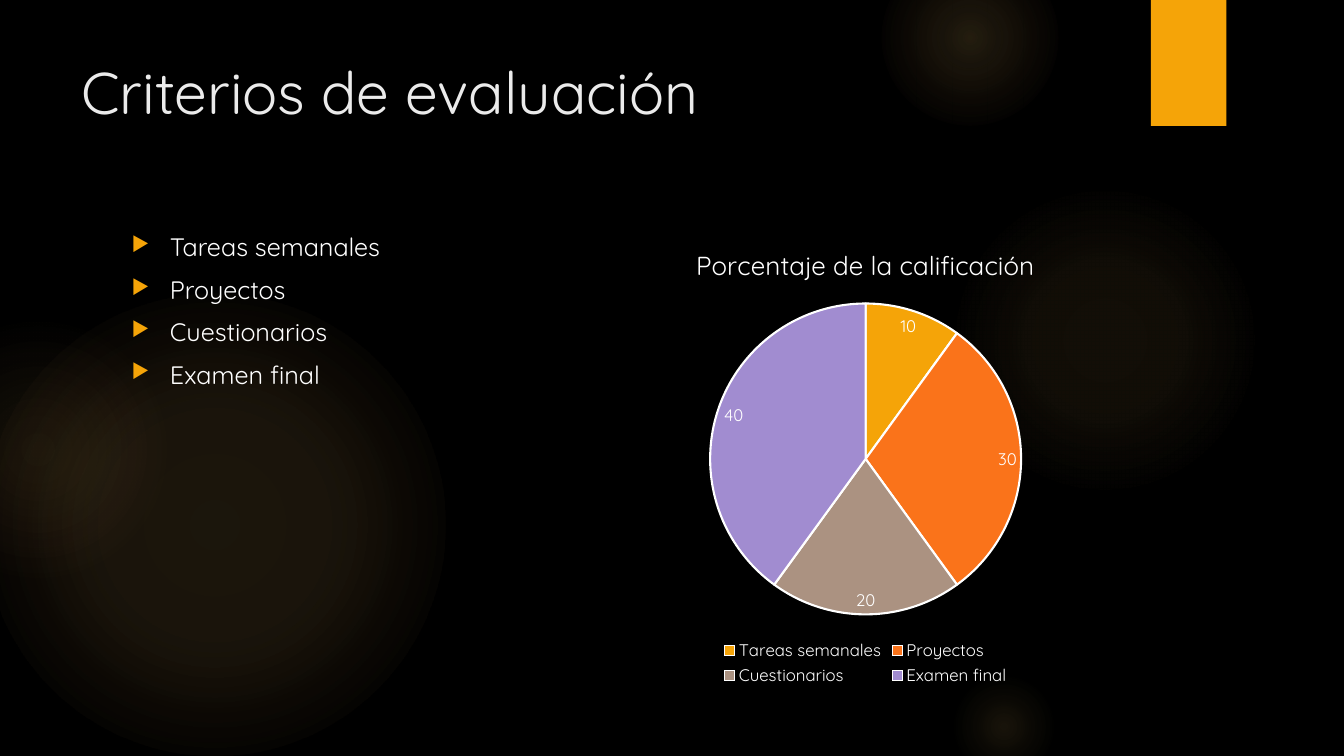
from dataclasses import dataclass

from lxml.etree import SubElement
from pptx import Presentation
from pptx.chart.data import CategoryChartData
from pptx.dml.color import RGBColor
from pptx.enum.chart import XL_CHART_TYPE as ChartType
from pptx.enum.chart import XL_LABEL_POSITION as LabelPosition
from pptx.enum.chart import XL_LEGEND_POSITION as LegendPosition
from pptx.enum.shapes import MSO_SHAPE as Preset
from pptx.enum.text import MSO_ANCHOR as Anchor
from pptx.enum.text import MSO_AUTO_SIZE as AutoSize
from pptx.enum.text import PP_ALIGN as Align
from pptx.oxml.ns import qn
from pptx.slide import Slide
from pptx.util import Emu, Inches, Pt

COLUMNS, ROWS = 160, 90
WIDTH, HEIGHT = Inches(13.33), Inches(7.5)
FONT = "Quicksand"
WHITE, AMBER, GLOW = "FFFFFF", "F5A408", "FAC96A"
TITLE = "Criterios de evaluación"
CHART_TITLE = "Porcentaje de la calificación"


@dataclass(frozen=True)
class Area:
    """A rectangle in grid columns and rows."""
    column: float
    row: float
    columns: float
    rows: float

    def box(self) -> tuple[Emu, Emu, Emu, Emu]:
        """Return left, top, width and height."""
        across, down = WIDTH / COLUMNS, HEIGHT / ROWS
        return (Emu(round(self.column * across)), Emu(round(self.row * down)),
                Emu(round(self.columns * across)), Emu(round(self.rows * down)))


@dataclass(frozen=True)
class Orb:
    """A round glow with its opacity at the centre and midway, in percent."""
    column: float
    row: float
    size: float
    centre: int
    middle: int
    middle_stop: int
    edge_stop: int
    edge_color: str = GLOW


@dataclass(frozen=True)
class Criterion:
    """A graded activity with its share and slice colour."""
    name: str
    share: int
    color: str


ORBS = [
    Orb(-2, 35, 55, 11, 10, 36, 75),
    Orb(-11, 38, 31, 8, 5, 36, 71, "F59B74"),
    Orb(113, 22, 37, 7, 6, 36, 69),
    Orb(105, -6, 21, 14, 7, 36, 73),
    Orb(113, 80, 13, 10, 5, 31, 66),
]
CRITERIA = [
    Criterion("Tareas semanales", 10, AMBER),
    Criterion("Proyectos", 30, "FA731A"),
    Criterion("Cuestionarios", 20, "AB9281"),
    Criterion("Examen final", 40, "A18CD0"),
]
RIBBON_AREA = Area(137, 0, 9, 15)
TITLE_AREA = Area(8.5, 6, 123.5, 18.4)
LIST_AREA = Area(14.5, 27, 57.7, 55.1)
CHART_AREA = Area(74.2, 27, 57.7, 55.1)


def rgb(color: str) -> RGBColor:
    """Turn a hex string into a colour."""
    return RGBColor.from_string(color)


def style(font, size: float, color: str = WHITE) -> None:
    """Set the typeface, size and colour of a font."""
    font.name, font.size, font.bold = FONT, Pt(size), False
    font.color.rgb = rgb(color)


def add_preset(page: Slide, preset: Preset, area: Area):
    """Add a preset shape without shadow or outline."""
    shape = page.shapes.add_shape(preset, *area.box())
    shape.shadow.inherit = False
    shape.line.fill.background()
    return shape


def add_orb(page: Slide, orb: Orb) -> None:
    """Draw a glow that fades out from its centre."""
    shape = add_preset(page, Preset.OVAL, Area(orb.column, orb.row, orb.size, orb.size))
    shape.fill.background()
    properties = shape.element.spPr
    empty = properties.find(qn("a:noFill"))
    gradient = SubElement(properties, qn("a:gradFill"), rotWithShape="1")
    properties.replace(empty, gradient)
    stops = SubElement(gradient, qn("a:gsLst"))
    for position, color, opacity in ((0, GLOW, orb.centre),
                                     (orb.middle_stop, GLOW, orb.middle),
                                     (orb.edge_stop, orb.edge_color, 0)):
        stop = SubElement(stops, qn("a:gs"), pos=str(position * 1000))
        tone = SubElement(stop, qn("a:srgbClr"), val=color)
        SubElement(tone, qn("a:alpha"), val=str(opacity * 1000))
    circle = SubElement(gradient, qn("a:path"), path="circle")
    SubElement(circle, qn("a:fillToRect"), l="50000", t="50000", r="50000", b="50000")


def add_ribbon(page: Slide) -> None:
    """Draw the amber tab at the top edge."""
    ribbon = add_preset(page, Preset.RECTANGLE, RIBBON_AREA)
    ribbon.fill.solid()
    ribbon.fill.fore_color.rgb = rgb(AMBER)


def set_title(page: Slide) -> None:
    """Fill the title placeholder and bring it above the glows."""
    title = page.shapes.title
    title.left, title.top, title.width, title.height = TITLE_AREA.box()
    title.text_frame.text = TITLE
    title.text_frame.vertical_anchor = Anchor.TOP
    title.text_frame.auto_size = AutoSize.NONE
    para = title.text_frame.paragraphs[0]
    para.alignment = Align.LEFT
    style(para.font, 42, "EBEBEB")
    title.element.getparent().append(title.element)


def add_criteria_list(page: Slide) -> None:
    """List the criteria with amber arrow bullets."""
    frame = page.shapes.add_textbox(*LIST_AREA.box()).text_frame
    frame.word_wrap = True
    frame.text = "\n".join(criterion.name for criterion in CRITERIA)
    for index, para in enumerate(frame.paragraphs):
        properties = para._p.get_or_add_pPr()
        properties.set("marL", str(Inches(0.38)))
        properties.set("indent", str(Inches(-0.38)))
        bullet_color = SubElement(properties, qn("a:buClr"))
        SubElement(bullet_color, qn("a:srgbClr"), val=AMBER)
        SubElement(properties, qn("a:buSzPct"), val="80000")
        SubElement(properties, qn("a:buChar"), char="▶")
        para.space_before = Pt(2.7 if index else 0)
        para.space_after = Pt(6)
        style(para.font, 18)


def add_share_chart(page: Slide) -> None:
    """Draw the pie of grade shares."""
    data = CategoryChartData()
    data.categories = [criterion.name for criterion in CRITERIA]
    data.add_series(CHART_TITLE, [criterion.share for criterion in CRITERIA])
    chart = page.shapes.add_chart(ChartType.PIE, *CHART_AREA.box(), data).chart
    style(chart.font, 10)
    chart.has_title = True
    chart.chart_title.include_in_layout = False
    chart.chart_title.text_frame.text = CHART_TITLE
    style(chart.chart_title.text_frame.paragraphs[0].font, 18.6)
    chart.has_legend = True
    chart.legend.position = LegendPosition.BOTTOM
    chart.legend.include_in_layout = False
    style(chart.legend.font, 12)
    plot = chart.plots[0]
    plot.vary_by_categories = True
    labels = plot.series[0].data_labels
    labels.show_value = True
    labels.position = LabelPosition.BEST_FIT
    style(labels.font, 12)
    for index, criterion in enumerate(CRITERIA):
        look = plot.series[0].points[index].format
        look.fill.solid()
        look.fill.fore_color.rgb = rgb(criterion.color)
        look.line.color.rgb = rgb(WHITE)
        look.line.width = Pt(1.5)


def main() -> None:
    """Build and save the deck."""
    deck = Presentation()
    deck.slide_width, deck.slide_height = WIDTH, HEIGHT
    page = deck.slides.add_slide(deck.slide_layouts[5])
    page.background.fill.solid()
    page.background.fill.fore_color.rgb = rgb("000000")
    for orb in ORBS:
        add_orb(page, orb)
    add_ribbon(page)
    set_title(page)
    add_criteria_list(page)
    add_share_chart(page)
    deck.save("out.pptx")


if __name__ == "__main__":
    main()
